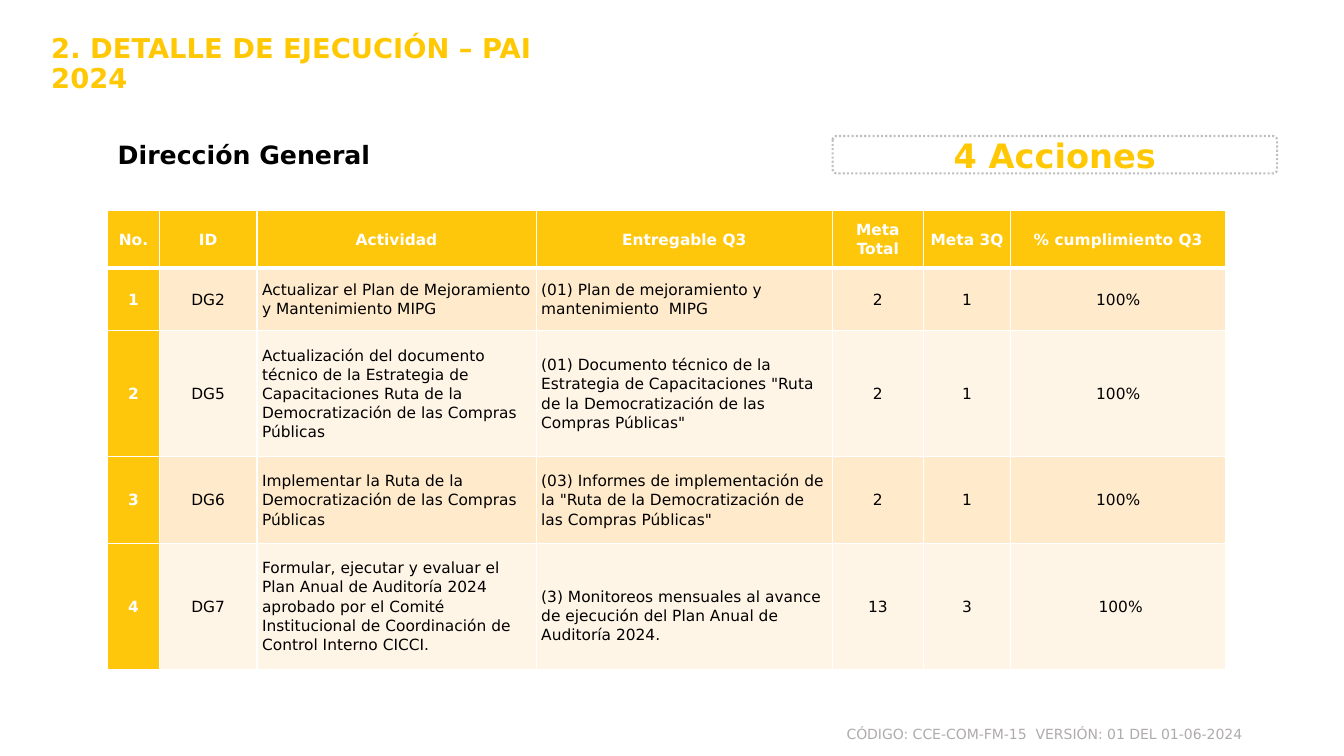
import pptx
import pptx.util
import pptx.dml.color
import pptx.enum.dml
import pptx.enum.shapes
import pptx.enum.text
import pptx.oxml
import pptx.oxml.ns

RGB = pptx.dml.color.RGBColor
GOLD = RGB(0xFF, 0xC8, 0x02)
AMBER = RGB(0xFE, 0xC7, 0x0C)
PEACH = RGB(0xFF, 0xEB, 0xCC)
CREAM = RGB(0xFF, 0xF5, 0xE7)
WHITE = RGB(0xFF, 0xFF, 0xFF)
BLACK = RGB(0, 0, 0)
GREY = RGB(0xAF, 0xAB, 0xAB)
SILVER = RGB(0xBF, 0xBF, 0xBF)
NAVY = RGB(0x10, 0x53, 0x9F)

FONT = "DejaVu Sans"
ALIGN = pptx.enum.text.PP_ALIGN
MIDDLE = pptx.enum.text.MSO_ANCHOR.MIDDLE
UNIT = pptx.util.Inches(1) / 12
WIDE, HIGH = 160, 90
COLS = [6.12, 11.64, 33.24, 35.28, 10.8, 10.44, 25.56]
ROWS = [6.84, 7.44, 15, 10.32, 15]
LEFT_COLS = (2, 3)

DATA = [
    ["No.", "ID", "Actividad", "Entregable Q3", "Meta Total", "Meta 3Q",
     "% cumplimiento Q3"],
    ["1", "DG2", "Actualizar el Plan de Mejoramiento y Mantenimiento MIPG",
     "(01) Plan de mejoramiento y mantenimiento  MIPG", "2", "1", "100%"],
    ["2", "DG5",
     "Actualización del documento técnico de la Estrategia de Capacitaciones "
     "Ruta de la Democratización de las Compras Públicas",
     "(01) Documento técnico de la Estrategia de Capacitaciones "
     "\"Ruta de la Democratización de las Compras Públicas\"",
     "2", "1", "100%"],
    ["3", "DG6",
     "Implementar la Ruta de la Democratización de las Compras Públicas",
     "(03) Informes de implementación de la "
     "\"Ruta de la Democratización de las Compras Públicas\"",
     "2", "1", "100%"],
    ["4", "DG7",
     "Formular, ejecutar y evaluar el Plan Anual de Auditoría 2024 aprobado "
     "por el Comité Institucional de Coordinación de Control Interno CICCI.",
     "(3) Monitoreos mensuales al avance de ejecución del Plan Anual de "
     "Auditoría 2024.", "13", "3", " 100%"],
]


def grid(*sizes):
    return [round(size * UNIT) for size in sizes]


def write(frame, text, size=11, color=BLACK, bold=False, align=ALIGN.LEFT,
          lead=None, after=None):
    frame.word_wrap = True
    para = frame.paragraphs[0]
    para.alignment = align
    if lead:
        para.line_spacing = lead
    if after:
        para.space_after = pptx.util.Pt(after)
    run = para.add_run()
    run.text = text
    run.font.name = FONT
    run.font.size = pptx.util.Pt(size)
    run.font.bold = bold
    run.font.color.rgb = color
    return run


def label(slide, area, text, **form):
    box = slide.shapes.add_textbox(*grid(*area))
    write(box.text_frame, text, **form)


def stroke(tag, color, width):
    return pptx.oxml.parse_xml(
        f'<a:{tag} {pptx.oxml.ns.nsdecls("a")} w="{pptx.util.Pt(width)}">'
        f'<a:solidFill><a:srgbClr val="{color}"/></a:solidFill></a:{tag}>')


def badge(slide, area, text):
    shape = slide.shapes.add_shape(
        pptx.enum.shapes.MSO_SHAPE.ROUNDED_RECTANGLE, *grid(*area))
    shape.shadow.inherit = False
    shape.adjustments[0] = 0.1
    shape.fill.background()
    shape.line.color.rgb = SILVER
    shape.line.width = pptx.util.Pt(1.5)
    shape.line.dash_style = pptx.enum.dml.MSO_LINE.ROUND_DOT
    shape.text_frame.vertical_anchor = MIDDLE
    run = write(shape.text_frame, text, size=24, color=GOLD, bold=True,
                align=ALIGN.CENTER)
    run.font._element.insert(0, stroke("ln", NAVY, 0.75))


def tint(row, col):
    if row == 0 or col == 0:
        return AMBER
    return PEACH if row % 2 else CREAM


def fill_cell(cell, row, col, text):
    top = 3 if row == 1 else 1
    base = 3 if row == 0 else 1
    props = cell._tc.get_or_add_tcPr()
    for side, width in (("lnL", 1), ("lnR", 1), ("lnT", top), ("lnB", base)):
        props.append(stroke(side, WHITE, width))
    cell.fill.solid()
    cell.fill.fore_color.rgb = tint(row, col)
    cell.vertical_anchor = MIDDLE
    cell.margin_left = cell.margin_right = pptx.util.Inches(0.05)
    cell.margin_top = cell.margin_bottom = 0
    head = row == 0 or col == 0
    left = row > 0 and col in LEFT_COLS
    write(cell.text_frame, text, color=WHITE if head else BLACK, bold=head,
          align=ALIGN.LEFT if left else ALIGN.CENTER, lead=1.07, after=8)


def plan(slide, left, top):
    area = grid(left, top, sum(COLS), sum(ROWS))
    table = slide.shapes.add_table(len(ROWS), len(COLS), *area).table
    table.horz_banding = False
    for col, width in zip(table.columns, grid(*COLS)):
        col.width = width
    for row, height in zip(table.rows, grid(*ROWS)):
        row.height = height
    for row, line in enumerate(DATA):
        for col, text in enumerate(line):
            fill_cell(table.cell(row, col), row, col, text)
    table.cell(4, 3).margin_top = pptx.util.Inches(0.19)


def main():
    deck = pptx.Presentation()
    deck.slide_width, deck.slide_height = grid(WIDE, HIGH)
    slide = deck.slides.add_slide(deck.slide_layouts[6])
    label(slide, (57.6, 85.8, 91.44, 3.24),
          "CÓDIGO: CCE-COM-FM-15  VERSIÓN: 01 DEL 01-06-2024",
          size=10, color=GREY, align=ALIGN.RIGHT)
    label(slide, (12.84, 15.96, 99.24, 4.8), "Dirección General",
          size=18, bold=True)
    badge(slide, (99.12, 16.2, 52.92, 4.44), "4 Acciones")
    label(slide, (4.92, 3.6, 66.12, 9.36),
          "2. DETALLE DE EJECUCIÓN – PAI 2024",
          size=19.5, color=GOLD, bold=True, lead=0.9)
    plan(slide, 12.84, 25.08)
    deck.save("out.pptx")


if __name__ == "__main__":
    main()
